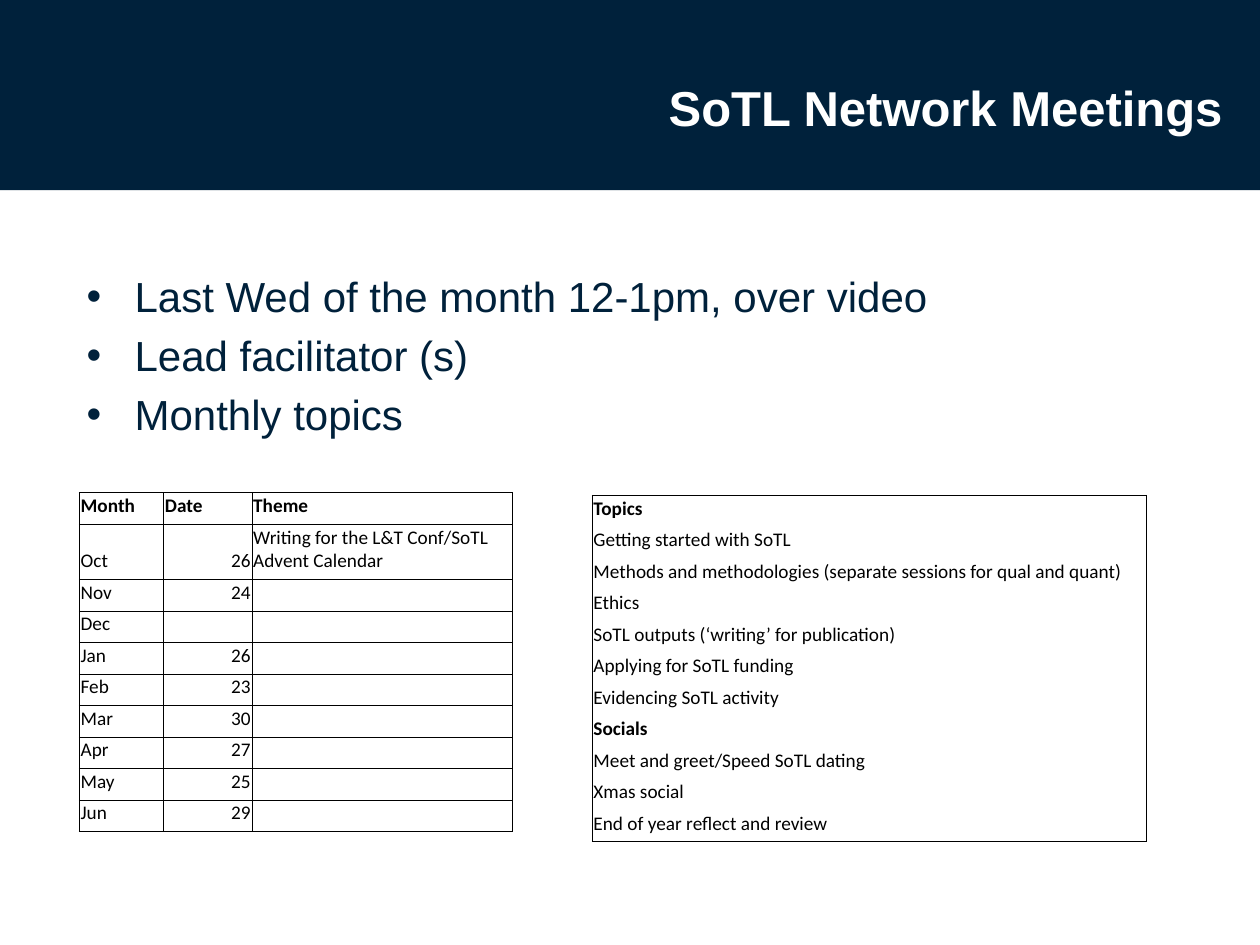
from pptx import Presentation
from pptx.dml.color import RGBColor
from pptx.enum.shapes import MSO_SHAPE
from pptx.enum.text import MSO_ANCHOR, PP_ALIGN
from pptx.oxml.ns import qn
from pptx.util import Inches, Pt
from lxml.etree import SubElement

NAVY = RGBColor(0x00, 0x21, 0x3B)
WHITE = RGBColor(0xFF, 0xFF, 0xFF)
BLACK = RGBColor(0x00, 0x00, 0x00)

ROW_HEIGHT = Inches(0.25)
TALL_ROW_HEIGHT = Inches(0.44)
CELL_TEXT_SIZE = Pt(11)

BULLETS = [
    "Last Wed of the month 12-1pm, over video",
    "Lead facilitator (s)",
    "Monthly topics",
]
SCHEDULE = [
    ("Month", "Date", "Theme"),
    ("Oct", "26", "Writing for the L&T Conf/SoTL Advent Calendar"),
    ("Nov", "24", ""),
    ("Dec", "", ""),
    ("Jan", "26", ""),
    ("Feb", "23", ""),
    ("Mar", "30", ""),
    ("Apr", "27", ""),
    ("May", "25", ""),
    ("Jun", "29", ""),
]
TOPICS = [
    "Topics",
    "Getting started with SoTL",
    "Methods and methodologies (separate sessions for qual and quant)",
    "Ethics",
    "SoTL outputs (‘writing’ for publication)",
    "Applying for SoTL funding",
    "Evidencing SoTL activity",
    "Socials",
    "Meet and greet/Speed SoTL dating",
    "Xmas social",
    "End of year reflect and review",
]
TOPIC_HEADINGS = {"Topics", "Socials"}


def add_run(paragraph, text, size, color, font_name, bold=False):
    run = paragraph.add_run()
    run.text = text
    run.font.size = size
    run.font.name = font_name
    run.font.bold = bold
    run.font.color.rgb = color


def add_text_frame(slide, left, top, width, height):
    text_frame = slide.shapes.add_textbox(left, top, width, height).text_frame
    text_frame.word_wrap = True
    return text_frame


def add_bullet(paragraph):
    properties = paragraph._p.get_or_add_pPr()
    properties.set("marL", str(Inches(0.38)))
    properties.set("indent", str(-Inches(0.38)))
    SubElement(properties, qn("a:buFont"), typeface="Arial")
    SubElement(properties, qn("a:buChar"), char="•")


def set_borders(cell, sides):
    """Draw thin black lines on the named sides (L, R, T, B) and none on the others."""
    properties = cell._tc.get_or_add_tcPr()
    for side in "LRTB":
        line = SubElement(properties, qn(f"a:ln{side}"), w=str(Pt(0.5)))
        if side in sides:
            fill = SubElement(line, qn("a:solidFill"))
            SubElement(fill, qn("a:srgbClr"), val=str(BLACK))
        else:
            SubElement(line, qn("a:noFill"))


def fill_cell(cell, text, sides, bold=False, alignment=PP_ALIGN.LEFT, anchor=MSO_ANCHOR.BOTTOM):
    cell.margin_left = cell.margin_right = cell.margin_top = Inches(0.01)
    cell.margin_bottom = Inches(0.05)
    cell.vertical_anchor = anchor
    set_borders(cell, sides)
    cell.fill.background()
    paragraph = cell.text_frame.paragraphs[0]
    paragraph.alignment = alignment
    if text:
        add_run(paragraph, text, CELL_TEXT_SIZE, BLACK, "Calibri", bold)
    else:
        # Keeps an empty cell from stretching its row
        SubElement(paragraph._p, qn("a:endParaRPr"), sz=str(int(CELL_TEXT_SIZE.pt * 100)))


def add_plain_table(slide, left, top, column_widths, row_heights):
    table = slide.shapes.add_table(
        len(row_heights), len(column_widths), left, top, sum(column_widths), sum(row_heights)
    ).table
    table.first_row = False
    table.horz_banding = False
    for column, width in zip(table.columns, column_widths):
        column.width = width
    for row, height in zip(table.rows, row_heights):
        row.height = height
    return table


def add_header(slide, left, top, width, height):
    # Navy band
    band = slide.shapes.add_shape(MSO_SHAPE.RECTANGLE, left, top, width, height)
    band.shadow.inherit = False
    band.fill.solid()
    band.fill.fore_color.rgb = NAVY
    band.line.fill.background()

    # Title
    text_frame = add_text_frame(
        slide, left + Inches(1.3), top + Inches(0.04), width - Inches(1.5), Inches(1.61)
    )
    text_frame.vertical_anchor = MSO_ANCHOR.MIDDLE
    paragraph = text_frame.paragraphs[0]
    paragraph.alignment = PP_ALIGN.RIGHT
    add_run(paragraph, "SoTL Network Meetings", Pt(28), WHITE, "Arial", bold=True)


def add_bullet_list(slide, left, top, width, height):
    text_frame = add_text_frame(slide, left, top, width, height)
    for index, text in enumerate(BULLETS):
        paragraph = text_frame.add_paragraph() if index else text_frame.paragraphs[0]
        add_bullet(paragraph)
        if index:
            paragraph.space_before = Pt(4.8)
        add_run(paragraph, text, Pt(24), NAVY, "Arial")


def add_schedule(slide, left, top, width):
    month_width, date_width = Inches(0.67), Inches(0.7)
    column_widths = [month_width, date_width, width - month_width - date_width]
    row_heights = [ROW_HEIGHT] * len(SCHEDULE)
    row_heights[1] = TALL_ROW_HEIGHT
    table = add_plain_table(slide, left, top, column_widths, row_heights)
    for row, values in enumerate(SCHEDULE):
        for column, text in enumerate(values):
            is_date = row > 0 and column == 1
            fill_cell(
                table.cell(row, column), text, "LRTB", bold=row == 0,
                alignment=PP_ALIGN.RIGHT if is_date else PP_ALIGN.LEFT,
            )


def add_topics(slide, left, top, width):
    table = add_plain_table(slide, left, top, [width], [ROW_HEIGHT] * len(TOPICS))
    last = len(TOPICS) - 1
    for row, text in enumerate(TOPICS):
        # Only the outer frame is drawn
        sides = "LR" + ("T" if row == 0 else "") + ("B" if row == last else "")
        anchor = MSO_ANCHOR.MIDDLE if 1 <= row <= 4 else MSO_ANCHOR.BOTTOM
        fill_cell(table.cell(row, 0), text, sides, bold=text in TOPIC_HEADINGS, anchor=anchor)


def main():
    presentation = Presentation()
    presentation.slide_width = Inches(10)
    presentation.slide_height = Inches(7.5)
    slide = presentation.slides.add_slide(presentation.slide_layouts[6])

    add_header(slide, 0, 0, presentation.slide_width, Inches(1.51))
    add_bullet_list(slide, Inches(0.59), Inches(2.1), Inches(8.5), Inches(4.07))
    add_schedule(slide, Inches(0.63), Inches(3.91), Inches(3.44))
    add_topics(slide, Inches(4.7), Inches(3.93), Inches(4.4))

    presentation.save("out.pptx")


if __name__ == "__main__":
    main()
